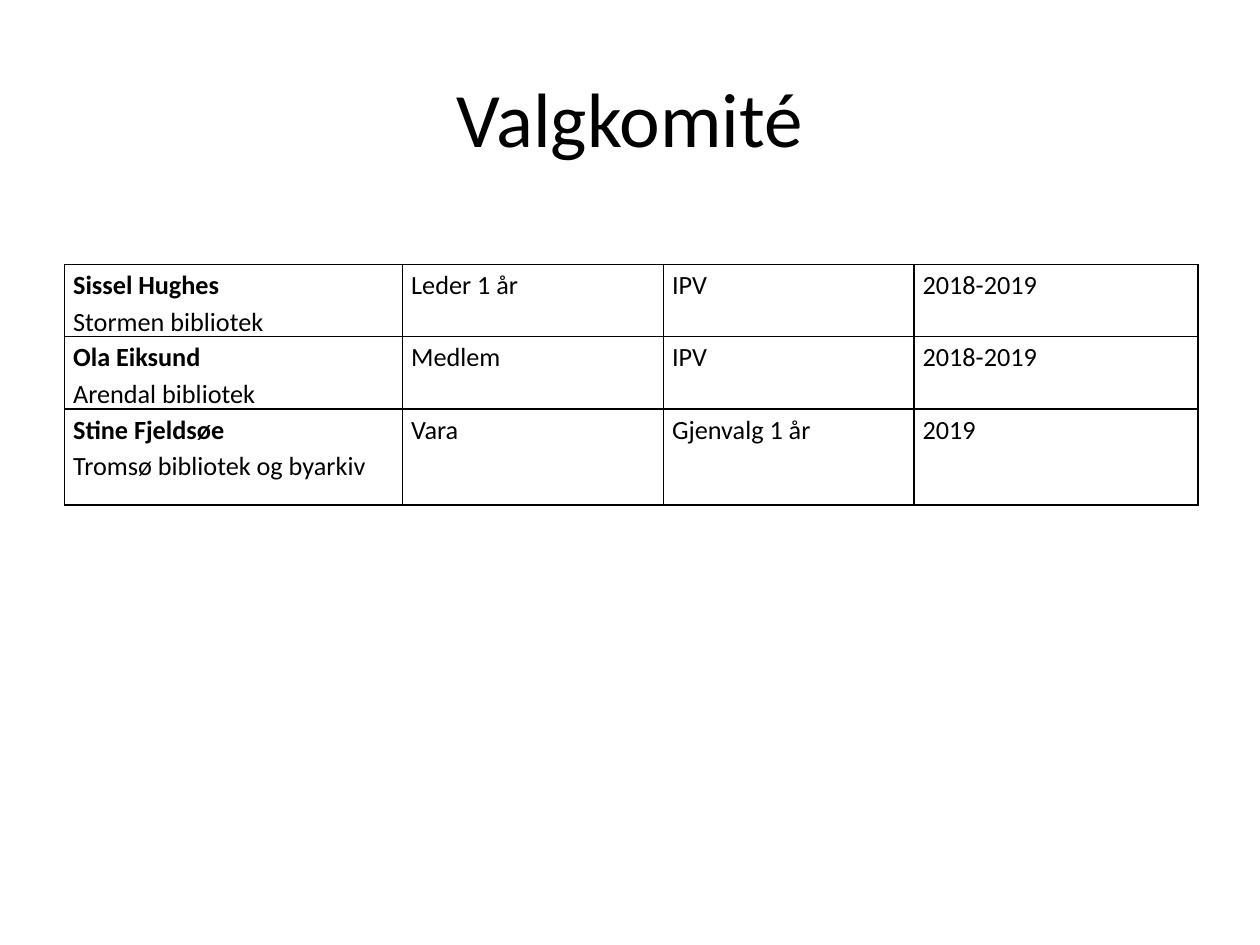
from dataclasses import dataclass

import lxml.etree
import pptx
import pptx.dml.color
import pptx.enum.text
import pptx.oxml.ns
import pptx.util

Pt = pptx.util.Pt
PP_ALIGN = pptx.enum.text.PP_ALIGN
MSO_ANCHOR = pptx.enum.text.MSO_ANCHOR


@dataclass(frozen=True)
class Theme:
    font: str = "Calibri"
    ink: str = "000000"
    title_size: float = 44
    cell_size: float = 15
    border_width: float = 1


THEME = Theme()

COLUMN_WIDTHS = (193.2, 149.1, 143.2, 162.3)
ROW_HEIGHTS = (40.3, 40.3, 54.7)
MEMBERS = (
    (("Sissel Hughes", "Stormen bibliotek"), "Leder 1 år", "IPV", "2018-2019"),
    (("Ola Eiksund", "Arendal bibliotek"), "Medlem", "IPV", "2018-2019"),
    (("Stine Fjeldsøe", "Tromsø bibliotek og byarkiv"), "Vara", "Gjenvalg 1 år", "2019"),
)


def add_text(p, text, size=THEME.cell_size, bold=False, align=PP_ALIGN.LEFT, spacing=1.0):
    p.alignment = align
    p.line_spacing = spacing
    r = p.add_run()
    r.text = text
    r.font.name = THEME.font
    r.font.size = Pt(size)
    r.font.bold = bold
    r.font.color.rgb = pptx.dml.color.RGBColor.from_string(THEME.ink)


def add_title(slide, text):
    sp = slide.shapes.add_textbox(Pt(36), Pt(21.6), Pt(648), Pt(90))
    tf = sp.text_frame
    tf.word_wrap = True
    tf.vertical_anchor = MSO_ANCHOR.MIDDLE
    add_text(tf.paragraphs[0], text, size=THEME.title_size, align=PP_ALIGN.CENTER)


def set_borders(cell):
    qn = pptx.oxml.ns.qn
    tc_pr = cell._tc.get_or_add_tcPr()
    for side in ("lnL", "lnR", "lnT", "lnB"):
        ln = lxml.etree.SubElement(tc_pr, qn(f"a:{side}"), w=str(Pt(THEME.border_width)))
        fill = lxml.etree.SubElement(ln, qn("a:solidFill"))
        lxml.etree.SubElement(fill, qn("a:srgbClr"), val=THEME.ink)


def fill_cell(cell, content):
    """Write plain text, or a (name, workplace) pair with the name in bold."""
    cell.margin_left = cell.margin_right = Pt(5)
    cell.margin_top = cell.margin_bottom = Pt(0)
    set_borders(cell)
    cell.fill.background()
    p = cell.text_frame.paragraphs[0]
    if isinstance(content, tuple):
        name, content = content
        add_text(p, name, bold=True, spacing=1.15)
        p.add_line_break()
    add_text(p, content, spacing=1.15)


def add_member_table(slide):
    table = slide.shapes.add_table(
        len(ROW_HEIGHTS), len(COLUMN_WIDTHS), Pt(36.8), Pt(151),
        Pt(sum(COLUMN_WIDTHS)), Pt(sum(ROW_HEIGHTS)),
    ).table
    table.first_row = table.horz_banding = False
    for column, width in zip(table.columns, COLUMN_WIDTHS):
        column.width = Pt(width)
    for row, height, member in zip(table.rows, ROW_HEIGHTS, MEMBERS):
        row.height = Pt(height)
        for cell, content in zip(row.cells, member):
            fill_cell(cell, content)


def main():
    prs = pptx.Presentation()
    prs.slide_width, prs.slide_height = Pt(720), Pt(540)
    slide = prs.slides.add_slide(prs.slide_layouts[6])
    add_title(slide, "Valgkomité")
    add_member_table(slide)
    prs.save("out.pptx")


if __name__ == "__main__":
    main()
